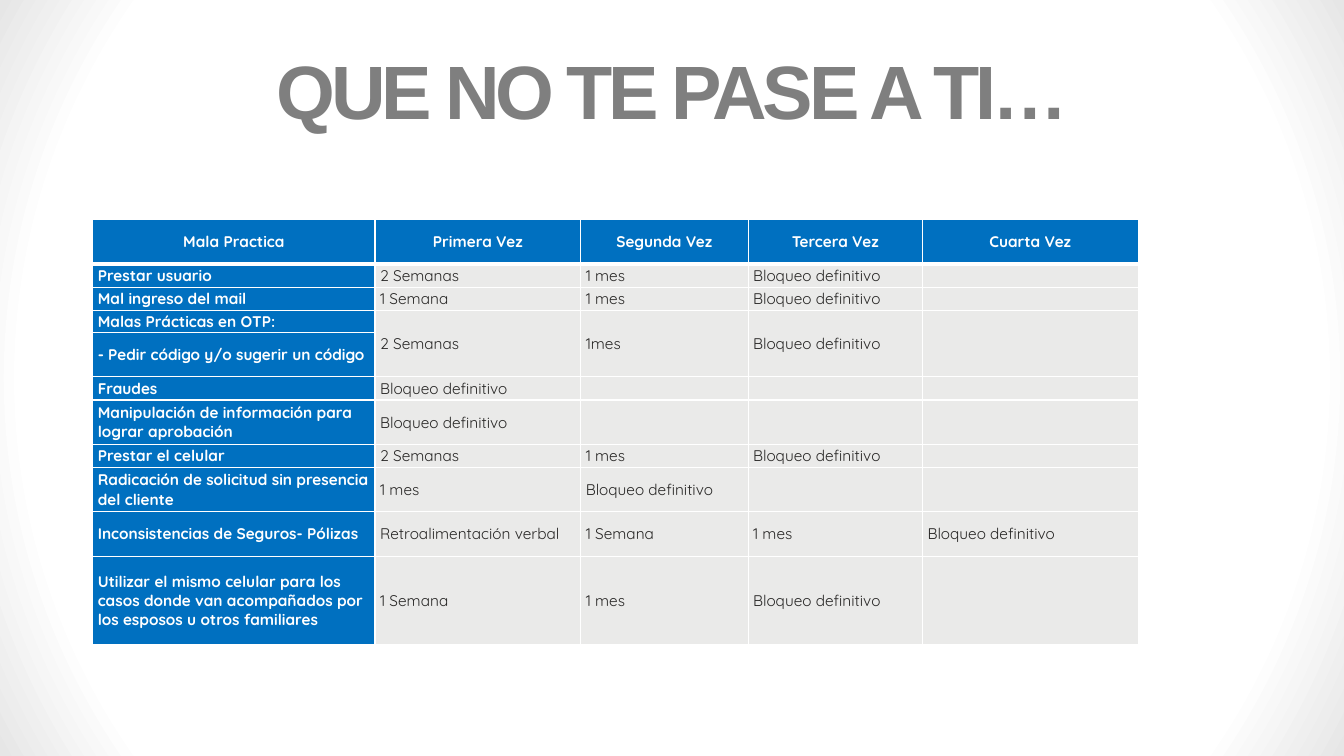
from dataclasses import dataclass

from lxml import etree
from pptx import Presentation
from pptx.dml.color import RGBColor
from pptx.enum.text import MSO_ANCHOR, MSO_AUTO_SIZE, PP_ALIGN
from pptx.oxml import parse_xml
from pptx.oxml.ns import nsdecls, qn
from pptx.slide import Slide
from pptx.table import Table, _Cell
from pptx.text.text import _Paragraph
from pptx.util import Inches, Pt

MIDDLE = MSO_ANCHOR.MIDDLE
NO_AUTOFIT = MSO_AUTO_SIZE.NONE
CENTER, LEFT = PP_ALIGN.CENTER, PP_ALIGN.LEFT

WHITE, BLUE, PALE_GRAY = "FFFFFF", "0070C0", "EAEAE9"
TITLE_GRAY, DARK = "7F7F7F", "292827"
TABLE_FONT_SIZE = 11
BLOCK = "Bloqueo definitivo"
HEADINGS = ["Mala Practica", "Primera Vez", "Segunda Vez", "Tercera Vez", "Cuarta Vez"]
COLUMN_WIDTHS = [2.8, 2.04, 1.66, 1.73, 2.14]
HEADER_HEIGHT = 0.44
MERGED_ROWS = (3, 4)


@dataclass(frozen=True)
class Practice:
    """A bad practice with the penalty for each occurrence."""

    name: str
    height: float
    penalties: tuple[str, ...] = ()


PRACTICES = [
    Practice("Prestar usuario", 0.23, ("2 Semanas", "1 mes", BLOCK)),
    Practice("Mal ingreso del mail", 0.23, ("1 Semana", "1 mes", BLOCK)),
    Practice("Malas Prácticas en OTP:", 0.22, ("2 Semanas", "1mes", BLOCK)),
    Practice("- Pedir código y/o sugerir un código", 0.44),
    Practice("Fraudes", 0.23, (BLOCK,)),
    Practice("Manipulación de información para lograr aprobación", 0.44, (BLOCK,)),
    Practice("Prestar el celular", 0.23, ("2 Semanas", "1 mes", BLOCK)),
    Practice("Radicación de solicitud sin presencia del cliente", 0.44, ("1 mes", BLOCK)),
    Practice("Inconsistencias de Seguros- Pólizas", 0.44,
             ("Retroalimentación verbal", "1 Semana", "1 mes", BLOCK)),
    Practice("Utilizar el mismo celular para los casos donde van acompañados "
             "por los esposos u otros familiares", 0.88, ("1 Semana", "1 mes", BLOCK)),
]


def color(value: str) -> RGBColor:
    """Turn a hex string into a colour."""
    return RGBColor.from_string(value)


def format_font(paragraph: _Paragraph, name: str, size: float, ink: str, bold: bool) -> None:
    """Set the font of a whole paragraph."""
    font = paragraph.font
    font.name, font.size, font.bold = name, Pt(size), bold
    font.color.rgb = color(ink)


def add_background(slide: Slide) -> None:
    """Give the slide a white radial gradient that darkens at the edges."""
    slide.element.cSld.insert(0, parse_xml(
        f'<p:bg {nsdecls("p", "a")}><p:bgPr><a:gradFill rotWithShape="1"><a:gsLst>'
        '<a:gs pos="84000"><a:srgbClr val="FFFFFF"/></a:gs>'
        '<a:gs pos="100000"><a:srgbClr val="E6E6E6"/></a:gs></a:gsLst>'
        '<a:path path="circle"><a:fillToRect l="50000" t="50000" r="50000" b="50000"/>'
        '</a:path></a:gradFill><a:effectLst/></p:bgPr></p:bg>'))


def add_title(slide: Slide, text: str) -> None:
    """Place and format the slide title."""
    title = slide.shapes.title
    title.left, title.top = Inches(0.92), Inches(0.22)
    title.width, title.height = Inches(11.5), Inches(1.45)
    frame = title.text_frame
    frame.text = text
    frame.word_wrap = True
    frame.auto_size = NO_AUTOFIT
    frame.vertical_anchor = MIDDLE
    paragraph = frame.paragraphs[0]
    paragraph.alignment = CENTER
    paragraph.line_spacing = 0.9
    format_font(paragraph, "Arial", 54, TITLE_GRAY, True)
    paragraph.runs[0].font._element.set("spc", "-300")


def add_borders(cell: _Cell, row: int) -> None:
    """Draw white cell borders, thicker beneath the header."""
    widths = {"lnL": 1, "lnR": 1, "lnT": 3 if row == 1 else 1, "lnB": 3 if row == 0 else 1}
    properties = cell._tc.get_or_add_tcPr()
    for side, width in widths.items():
        line = etree.SubElement(properties, qn(f"a:{side}"), w=str(Pt(width)))
        fill = etree.SubElement(line, qn("a:solidFill"))
        etree.SubElement(fill, qn("a:srgbClr"), val=WHITE)


def fill_cell(table: Table, row: int, column: int, text: str) -> None:
    """Write and format one table cell."""
    cell = table.cell(row, column)
    is_heading = row == 0 or column == 0
    add_borders(cell, row)
    cell.fill.solid()
    cell.fill.fore_color.rgb = color(BLUE if is_heading else PALE_GRAY)
    cell.margin_left = cell.margin_right = Inches(0.05)
    cell.margin_top = cell.margin_bottom = 0
    cell.vertical_anchor = MIDDLE
    paragraph = cell.text_frame.paragraphs[0]
    paragraph.alignment = CENTER if row == 0 else LEFT
    format_font(paragraph, "Quicksand", TABLE_FONT_SIZE, WHITE if is_heading else DARK, is_heading)
    if text:
        paragraph.add_run().text = text
    else:
        etree.SubElement(paragraph._p, qn("a:endParaRPr"), sz=str(TABLE_FONT_SIZE * 100))


def add_penalty_table(slide: Slide) -> None:
    """Draw the table of practices and penalties."""
    heights = [HEADER_HEIGHT] + [practice.height for practice in PRACTICES]
    table = slide.shapes.add_table(
        len(heights), len(COLUMN_WIDTHS), Inches(0.92), Inches(2.18),
        Inches(sum(COLUMN_WIDTHS)), Inches(sum(heights))).table
    for column, width in zip(table.columns, COLUMN_WIDTHS):
        column.width = Inches(width)
    for table_row, height in zip(table.rows, heights):
        table_row.height = Inches(height)
    rows = [HEADINGS] + [[practice.name, *practice.penalties] for practice in PRACTICES]
    for row, texts in enumerate(rows):
        for column in range(len(COLUMN_WIDTHS)):
            fill_cell(table, row, column, texts[column] if column < len(texts) else "")
    first, last = MERGED_ROWS
    for column in range(1, len(COLUMN_WIDTHS)):
        table.cell(first, column).merge(table.cell(last, column))


def main() -> None:
    """Build and save the presentation."""
    presentation = Presentation()
    presentation.slide_width, presentation.slide_height = Inches(13.33), Inches(7.5)
    slide = presentation.slides.add_slide(presentation.slide_layouts[5])
    add_background(slide)
    add_title(slide, "QUE NO TE PASE A TI…")
    add_penalty_table(slide)
    presentation.save("out.pptx")


if __name__ == "__main__":
    main()
